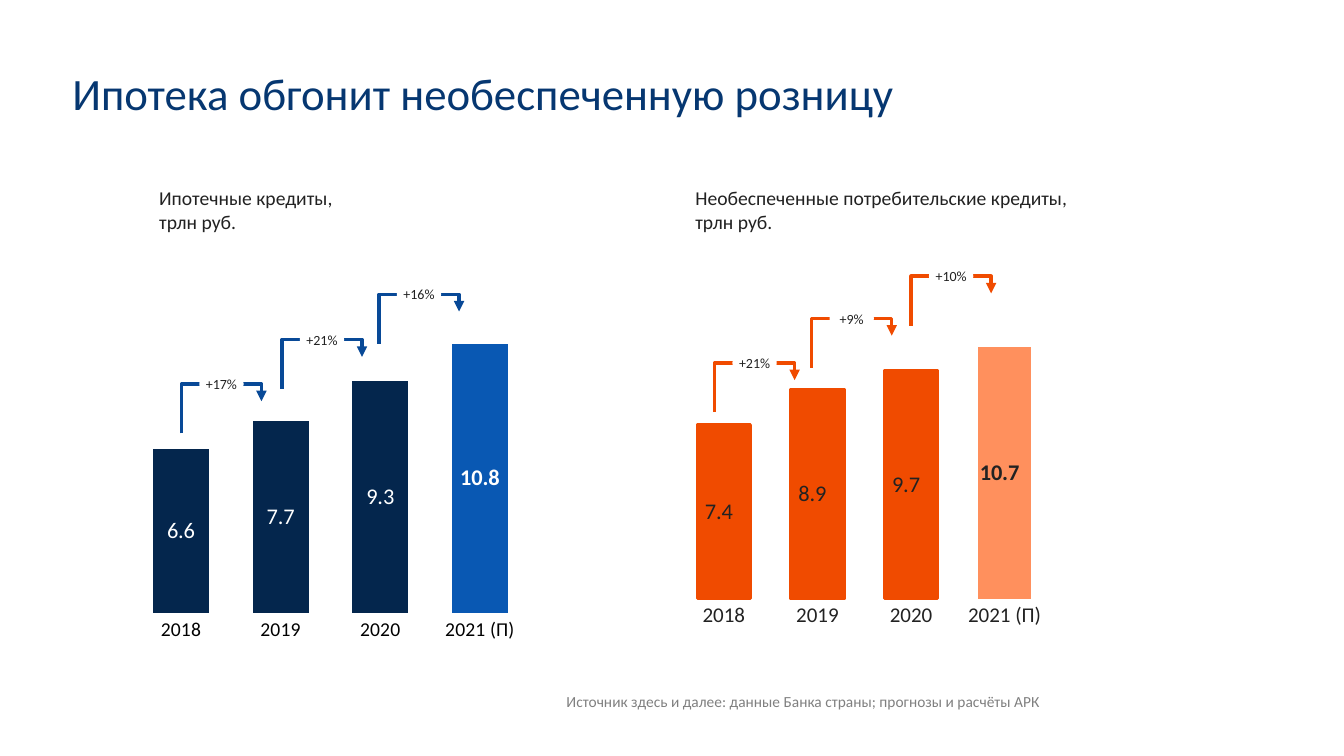
import lxml.etree
import pptx
import pptx.chart.data
import pptx.dml.color
import pptx.enum.chart
import pptx.enum.shapes
import pptx.enum.text
import pptx.oxml
import pptx.oxml.ns
import pptx.util

Pt = pptx.util.Pt
qn = pptx.oxml.ns.qn
ALIGN = pptx.enum.text.PP_ALIGN
ANCHOR = pptx.enum.text.MSO_ANCHOR

TEXT, NAVY, BLUE, ORANGE = "222222", "04264D", "084997", "F04B00"
YEARS = ["2018", "2019", "2020", "2021 (П)"]
RUBLE_FORMAT = r"_-* #\ ##0.0\ _₽_-;\-* #\ ##0.0\ _₽_-;_-"


def color(hex_string):
    return pptx.dml.color.RGBColor.from_string(hex_string)


def set_all(target, values):
    for name, value in values.items():
        setattr(target, name, value)


class SlideBuilder:
    font_name = "Calibri"
    arrow_run, arrow_drop, arrow_rise = 57.2, 23, 35.3
    badge_width, badge_height = 31.7, 28.8

    def __init__(self, slide):
        self.slide = slide

    def style_font(self, font, size, hex_string, bold=False):
        set_all(font, {"name": self.font_name, "size": Pt(size), "bold": bold})
        font.color.rgb = color(hex_string)

    def fill_text(self, shape, text, size, hex_string, frame_format, paragraph_format):
        set_all(shape.text_frame, frame_format)
        paragraph = shape.text_frame.paragraphs[0]
        paragraph.text = text
        set_all(paragraph, paragraph_format)
        for run in paragraph.runs:
            self.style_font(run.font, size, hex_string)

    def text(self, box, text, size, hex_string=TEXT, anchor=ANCHOR.TOP, **paragraph_format):
        shape = self.slide.shapes.add_textbox(*map(Pt, box))
        frame_format = {"word_wrap": True, "vertical_anchor": anchor}
        self.fill_text(shape, text, size, hex_string, frame_format, paragraph_format)

    def growth_arrow(self, left, bottom, label, hex_string):
        """Draw an arrow rising from (left, bottom) over to the next bar, with its label."""
        shapes = self.slide.shapes.add_group_shape().shapes
        center_x, center_y = left + self.arrow_run / 2, bottom - self.arrow_drop / 2
        # The elbow is laid out sideways around its centre, then turned by 90 degrees.
        half_width, half_height = self.arrow_drop / 2, self.arrow_run / 2
        connector = shapes.add_connector(
            pptx.enum.shapes.MSO_CONNECTOR.ELBOW,
            Pt(center_x + half_width), Pt(center_y + half_height),
            Pt(center_x - half_width), Pt(center_y - half_height))
        connector.line.width = Pt(2.5)
        connector.line.color.rgb = color(hex_string)
        properties = connector._element.spPr
        properties.find(qn("a:xfrm")).set("rot", "5400000")
        geometry = properties.find(qn("a:prstGeom"))
        guides = geometry.find(qn("a:avLst"))
        if guides is None:
            guides = lxml.etree.SubElement(geometry, qn("a:avLst"))
        bend = round(self.arrow_rise / self.arrow_drop * 100000)
        lxml.etree.SubElement(guides, qn("a:gd"), name="adj1", fmla=f"val {bend}")
        line = properties.find(qn("a:ln"))
        lxml.etree.SubElement(line, qn("a:tailEnd"), type="triangle")
        lxml.etree.SubElement(properties, qn("a:effectLst"))

        badge = shapes.add_shape(
            pptx.enum.shapes.MSO_SHAPE.OVAL,
            Pt(center_x - self.badge_width / 2),
            Pt(bottom - self.arrow_rise - self.badge_height / 2),
            Pt(self.badge_width), Pt(self.badge_height))
        badge.shadow.inherit = False
        badge.fill.solid()
        badge.fill.fore_color.rgb = color("FFFFFF")
        badge.line.fill.background()
        frame_format = {"word_wrap": False, "vertical_anchor": ANCHOR.MIDDLE}
        for side in ("left", "right", "top", "bottom"):
            frame_format["margin_" + side] = 0
        self.fill_text(badge, label, 10, TEXT, frame_format, {"alignment": ALIGN.CENTER})

    def place_plot(self, chart, fractions):
        """Fix the inner plot area to x, y, width and height fractions of the chart."""
        plot_area = chart._chartSpace.chart.plotArea
        for old_layout in plot_area.findall(qn("c:layout")):
            plot_area.remove(old_layout)
        layout = lxml.etree.Element(qn("c:layout"))
        manual = lxml.etree.SubElement(layout, qn("c:manualLayout"))
        settings = {"layoutTarget": "inner", "xMode": "edge", "yMode": "edge"}
        settings.update(zip("xywh", map(str, fractions)))
        for name, value in settings.items():
            lxml.etree.SubElement(manual, qn("c:" + name), val=value)
        plot_area.insert(0, layout)

    def column_chart(self, box, values, bar, forecast, label, axis_size, axis_color,
                     number_format, plot_fractions, outlined):
        data = pptx.chart.data.CategoryChartData(number_format=number_format)
        data.categories = YEARS
        data.add_series("Series 1", values)
        chart = self.slide.shapes.add_chart(
            pptx.enum.chart.XL_CHART_TYPE.COLUMN_CLUSTERED, *map(Pt, box), data).chart
        set_all(chart, {"has_legend": False, "has_title": False})
        self.style_font(chart.font, 10, TEXT)
        self.place_plot(chart, plot_fractions)

        set_all(chart.value_axis, {"minimum_scale": 0, "maximum_scale": 12,
                                   "has_major_gridlines": False, "visible": False})
        axis = chart.category_axis
        axis.major_tick_mark = pptx.enum.chart.XL_TICK_MARK.NONE
        axis.format.line.fill.background()
        self.style_font(axis.tick_labels.font, axis_size, axis_color)

        plot = chart.plots[0]
        set_all(plot, {"gap_width": 77, "overlap": -27, "vary_by_categories": False})
        series = plot.series[0]
        last_point = series.points[len(values) - 1]
        for part, hex_string in ((series, bar), (last_point, forecast)):
            part.format.fill.solid()
            part.format.fill.fore_color.rgb = color(hex_string)
            part.format.line.fill.background()
        if outlined:
            series.format.line.color.rgb = color(bar)
            series.format.line.width = Pt(2.5)

        center = pptx.enum.chart.XL_LABEL_POSITION.CENTER
        set_all(series.data_labels, {"show_value": True, "position": center,
                                     "number_format": number_format,
                                     "number_format_is_linked": False})
        self.style_font(series.data_labels.font, 16, label)
        self.style_font(last_point.data_label.font, 16, label, bold=True)
        last_point.data_label.position = center


def main():
    presentation = pptx.Presentation()
    set_all(presentation, {"slide_width": Pt(960), "slide_height": Pt(540)})
    builder = SlideBuilder(presentation.slides.add_slide(presentation.slide_layouts[6]))

    builder.text((44.6, 37.4, 1340, 62.6), "Ипотека обгонит необеспеченную розницу", 32,
                 "063771", ANCHOR.MIDDLE, line_spacing=0.9, space_before=Pt(10))
    builder.column_chart((87.8, 216.7, 296.6, 246.2), (6.6, 7.7, 9.3, 10.8), NAVY, "0958B3",
                         "FFFFFF", 14, "000000", "#,##0.0", (0.02, 0.03, 0.96, 0.87), False)
    builder.text((106.6, 129.6, 406.8, 41), "Ипотечные кредиты, \nтрлн руб.", 14)
    builder.column_chart((475.2, 216.7, 281.5, 239.8), (7.4, 8.9, 9.7, 10.7), ORANGE, "FF905D",
                         TEXT, 15, TEXT, RUBLE_FORMAT, (0.03, 0.04, 0.95, 0.84), True)
    builder.text((489.6, 129.6, 406.8, 41),
                 "Необеспеченные потребительские кредиты, \nтрлн руб.", 14)
    builder.text((244, 491, 506.2, 20.9),
                 "Источник здесь и далее: данные Банка страны; прогнозы и расчёты АРК",
                 11, "808080", alignment=ALIGN.RIGHT)

    growth = {
        BLUE: [(129.6, 309.6, "+17%"), (201.4, 277.9, "+21%"), (270.7, 245.5, "+16%")],
        ORANGE: [(510.4, 294.5, "+21%"), (579.8, 262.8, "+9%"), (650.8, 232.6, "+10%")],
    }
    for hex_string, arrows in growth.items():
        for left, bottom, label in arrows:
            builder.growth_arrow(left, bottom, label, hex_string)

    presentation.save("out.pptx")


if __name__ == "__main__":
    main()
